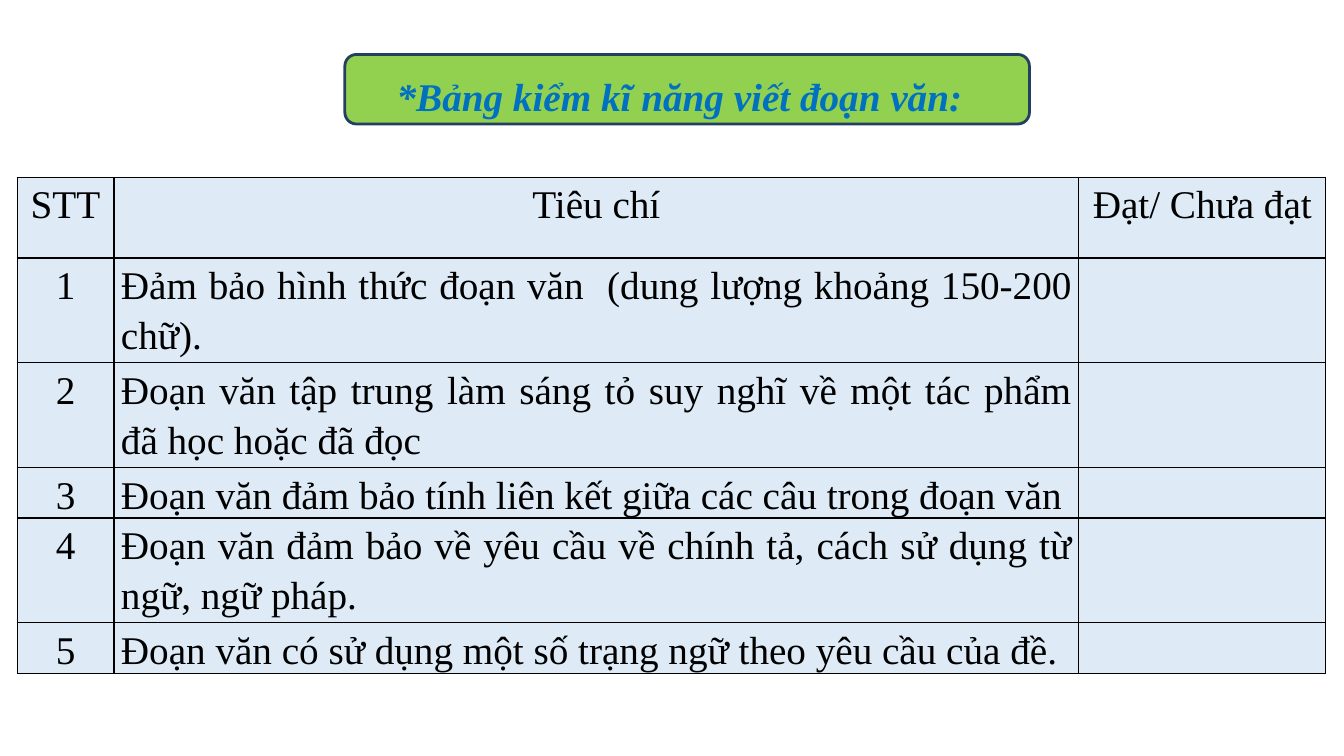
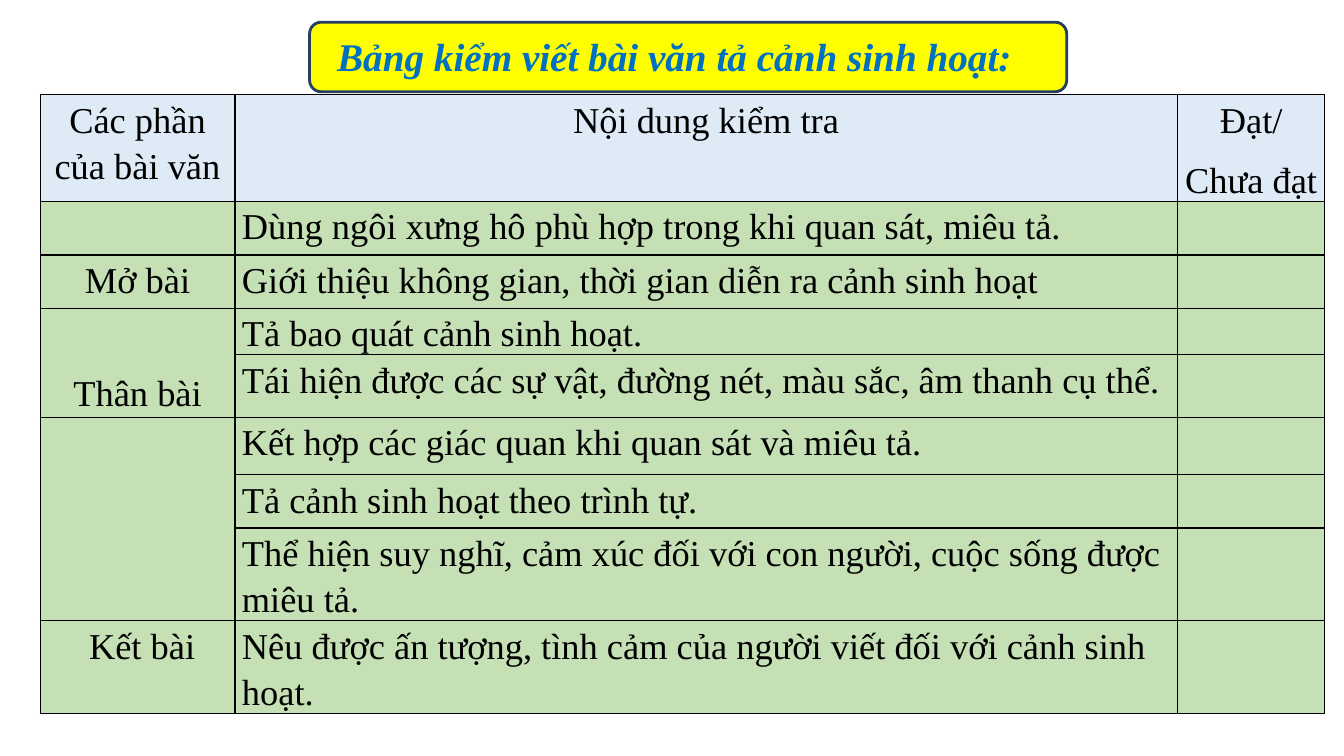
from lxml.etree import SubElement
from pptx import Presentation
from pptx.dml.color import RGBColor
from pptx.enum.shapes import MSO_SHAPE
from pptx.enum.text import MSO_ANCHOR, PP_ALIGN
from pptx.oxml.ns import qn
from pptx.util import Inches, Pt

BLACK = RGBColor(0x00, 0x00, 0x00)
TITLE_BLUE = RGBColor(0x00, 0x70, 0xC0)
BANNER_EDGE = RGBColor(0x24, 0x3F, 0x60)
LIME = RGBColor(0x92, 0xD0, 0x50)
YELLOW = RGBColor(0xFF, 0xFF, 0x00)
PALE_BLUE = RGBColor(0xDE, 0xEB, 0xF7)
PALE_GREEN = RGBColor(0xC5, 0xE0, 0xB4)

TITLE_FONT = {"name": "Times New Roman", "size": Pt(28), "bold": True, "italic": True}
CELL_FONT = {"name": "Times New Roman", "bold": False}
CELL_MARGINS = {"margin_left": Inches(0.07), "margin_right": Inches(0.07),
                "margin_top": 0, "margin_bottom": 0}

SKILL_ROWS = [
    ("STT", "Tiêu chí", "Đạt/ Chưa đạt"),
    ("1", "Đảm bảo hình thức đoạn văn  (dung lượng khoảng 150-200 chữ).", ""),
    ("2", "Đoạn văn tập trung làm sáng tỏ suy nghĩ về một tác phẩm đã học hoặc đã đọc", ""),
    ("3", "Đoạn văn đảm bảo tính liên kết giữa các câu trong đoạn văn", ""),
    ("4", "Đoạn văn đảm bảo về yêu cầu về chính tả, cách sử dụng từ ngữ, ngữ pháp.", ""),
    ("5", "Đoạn văn có sử dụng một số trạng ngữ theo yêu cầu của đề.", ""),
]
ESSAY_ROWS = [
    ("Các phần của bài văn", "Nội dung kiểm tra", "Đạt/\nChưa đạt"),
    ("", "Dùng ngôi xưng hô phù hợp trong khi quan sát, miêu tả.", ""),
    ("Mở bài", "Giới thiệu không gian, thời gian diễn ra cảnh sinh hoạt", ""),
    ("Thân bài", "Tả bao quát cảnh sinh hoạt.", ""),
    ("", "Tái hiện được các sự vật, đường nét, màu sắc, âm thanh cụ thể.", ""),
    ("", "Kết hợp các giác quan khi quan sát và miêu tả.", ""),
    ("", "Tả cảnh sinh hoạt theo trình tự.", ""),
    ("", "Thể hiện suy nghĩ, cảm xúc đối với con người, cuộc sống được miêu tả.", ""),
    ("Kết bài", "Nêu được ấn tượng, tình cảm của người viết đối với cảnh sinh hoạt.", ""),
]


def apply_format(target, values):
    for attribute, value in values.items():
        setattr(target, attribute, value)


def write_text(frame, text, font, color, paragraph_format):
    for index, line in enumerate(text.split("\n")):
        paragraph = frame.add_paragraph() if index else frame.paragraphs[0]
        apply_format(paragraph, paragraph_format)
        run = paragraph.add_run()
        run.text = line
        apply_format(run.font, font)
        run.font.color.rgb = color


def add_banner(slide, box, title, fill, indent, drop):
    banner = slide.shapes.add_shape(MSO_SHAPE.ROUNDED_RECTANGLE, *map(Inches, box))
    banner.shadow.inherit = False
    banner.fill.solid()
    banner.fill.fore_color.rgb = fill
    banner.line.color.rgb = BANNER_EDGE
    banner.line.width = Pt(2)
    frame = banner.text_frame
    apply_format(frame, {"word_wrap": True, "vertical_anchor": MSO_ANCHOR.TOP,
                         "margin_left": Inches(indent), "margin_right": 0,
                         "margin_top": Inches(drop), "margin_bottom": 0})
    write_text(frame, title, TITLE_FONT, TITLE_BLUE,
               {"alignment": PP_ALIGN.LEFT, "line_spacing": 1.15})


def outline_cell(cell):
    properties = cell._tc.get_or_add_tcPr()
    for position, side in enumerate(("lnL", "lnR", "lnT", "lnB")):
        edge = SubElement(properties, qn(f"a:{side}"), w=str(Pt(1)))
        properties.insert(position, edge)
        paint = SubElement(edge, qn("a:solidFill"))
        SubElement(paint, qn("a:srgbClr"), val=str(BLACK))


def add_checklist(slide, corner, widths, heights, rows, size, gap, body_fill, body_align):
    extent = (sum(widths), sum(heights))
    checklist = slide.shapes.add_table(
        len(rows), len(widths), *map(Inches, corner + extent)).table
    apply_format(checklist, {"first_row": False, "horz_banding": False})
    for column, width in zip(checklist.columns, widths):
        column.width = Inches(width)
    for row, height in zip(checklist.rows, heights):
        row.height = Inches(height)
    for r, texts in enumerate(rows):
        for c, text in enumerate(texts):
            cell = checklist.cell(r, c)
            apply_format(cell, CELL_MARGINS)
            cell.fill.solid()
            cell.fill.fore_color.rgb = body_fill if r else PALE_BLUE
            outline_cell(cell)
            if text:
                align = body_align if r and c == 1 else PP_ALIGN.CENTER
                write_text(cell.text_frame, text, {**CELL_FONT, "size": Pt(size)}, BLACK,
                           {"alignment": align, "line_spacing": 1.15,
                            "space_after": Pt(gap)})
    return checklist


def add_skill_slide(slide):
    add_banner(slide, (3.42, 0.54, 6.79, 0.69), "*Bảng kiểm kĩ năng viết đoạn văn:",
               LIME, 0.48, 0.07)
    add_checklist(slide, (0.17, 1.76), (0.96, 9.57, 2.45),
                  (0.8, 1.04, 1.04, 0.5, 1.04, 0.5), SKILL_ROWS,
                  28, 12, PALE_BLUE, PP_ALIGN.JUSTIFY)


def add_essay_slide(slide):
    add_banner(slide, (3.07, 0.22, 7.51, 0.69), "Bảng kiểm viết bài văn tả cảnh sinh hoạt:",
               YELLOW, 0.24, 0)
    checklist = add_checklist(slide, (0.4, 0.94), (1.93, 9.35, 1.46),
                              (0.68, 0.53, 0.53, 0.41, 0.62, 0.57, 0.53, 0.58, 0.68),
                              ESSAY_ROWS, 26, 10, PALE_GREEN, PP_ALIGN.LEFT)
    for first, last in ((3, 4), (5, 7)):
        checklist.cell(first, 0).merge(checklist.cell(last, 0))
    checklist.cell(3, 0).margin_top = Inches(0.59)
    checklist.cell(8, 0).margin_left = Inches(0.16)


def main():
    deck = Presentation()
    deck.slide_width, deck.slide_height = Inches(13.33), Inches(7.5)
    for build in (add_skill_slide, add_essay_slide):
        build(deck.slides.add_slide(deck.slide_layouts[6]))
    deck.save("out.pptx")


if __name__ == "__main__":
    main()
